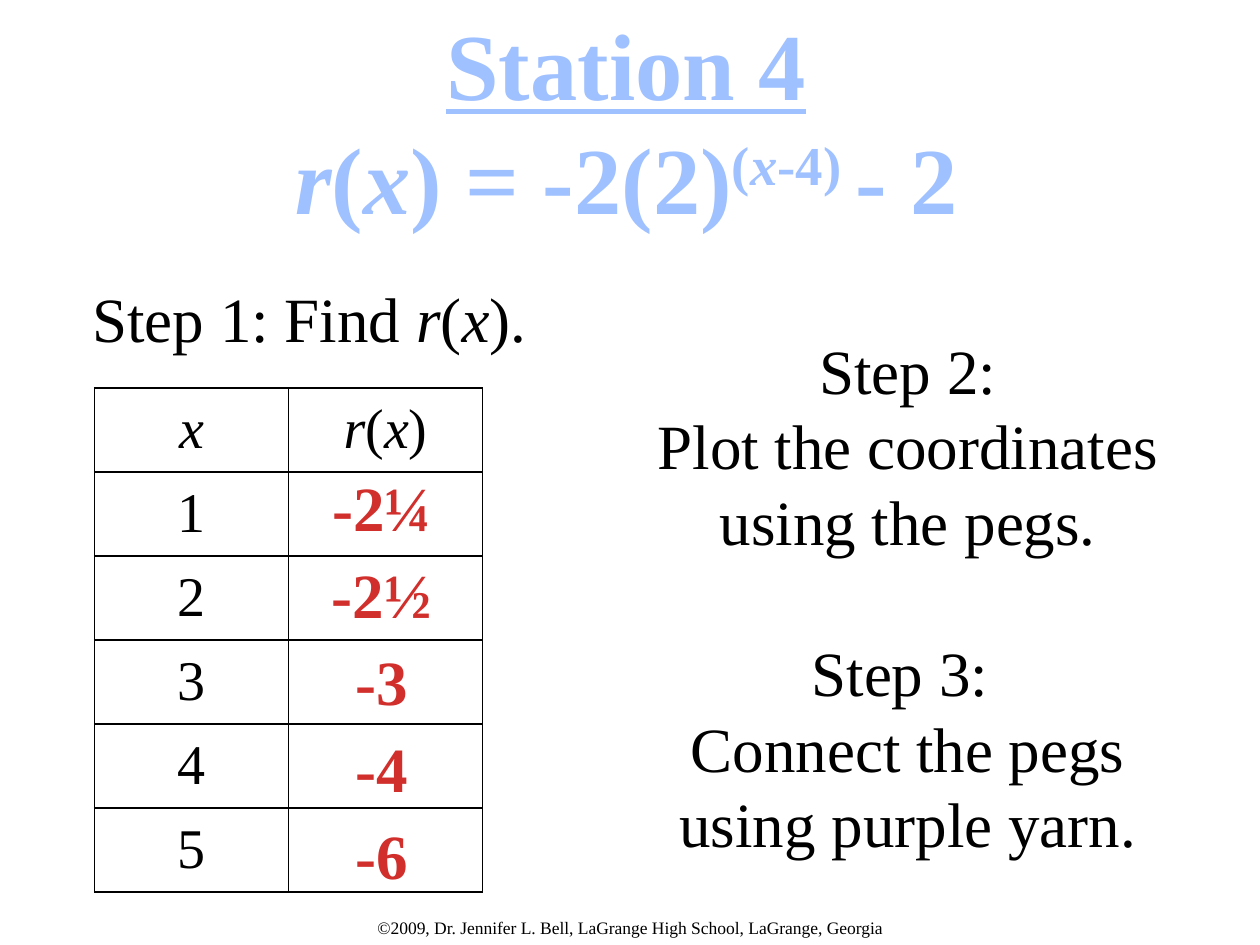
"""Build the Station 4 slide on plotting an exponential function."""
from dataclasses import dataclass

from lxml import etree
from pptx import Presentation
from pptx.dml.color import RGBColor
from pptx.enum.text import MSO_ANCHOR, MSO_AUTO_SIZE, PP_ALIGN
from pptx.oxml.ns import qn
from pptx.util import Pt

CENTER, TOP, MIDDLE = PP_ALIGN.CENTER, MSO_ANCHOR.TOP, MSO_ANCHOR.MIDDLE
GROW = MSO_AUTO_SIZE.SHAPE_TO_FIT_TEXT
PX = 9144
FACE = "Times New Roman"
HUES = {"ink": "000000", "edge": "467AB8", "pale": "BFD3F9", "sky": "A0C1FF",
        "navy": "003D85", "pink": "FC7C7A", "red": "D02F2C", "deep": "C70500"}
BLUES = ((0, "pale"), (9, "sky"), (50, "navy"), (79, "sky"), (100, "pale"))
REDS = ((0, "pink"), (75, "red"), (100, "deep"))


@dataclass(frozen=True)
class Bit:
    text: str
    ital: bool = False
    sup: bool = False


@dataclass(frozen=True)
class Box:
    left: int
    top: int
    width: int
    height: int

    def emu(self) -> tuple:
        return tuple(n * PX for n in (self.left, self.top, self.width, self.height))


@dataclass(frozen=True)
class Value:
    text: str
    width: int


R, X = Bit("r", True), Bit("x", True)
OPEN, CLOSE = Bit("("), Bit(")")
CALL = (R, OPEN, X, CLOSE)
RULE = (R, OPEN, X, Bit(") = -2(2)"), Bit("(", sup=True), Bit("x", True, True),
        Bit("-4) ", sup=True), Bit("- 2"))
STEPS = ("Step 2:", "Plot the coordinates using the pegs.",
         "Step 3: ", "Connect the pegs using purple yarn.")
VALUES = (Value("-2¼", 107), Value("-2½", 108),
          Value("-3", 64), Value("-4", 64), Value("-6", 64))
CREDIT = "©2009, Dr. Jennifer L. Bell, LaGrange High School, LaGrange, Georgia"


def tint(node, hue: str) -> None:
    fill = etree.SubElement(node, qn("a:solidFill"))
    etree.SubElement(fill, qn("a:srgbClr"), val=HUES[hue])


def shade(run, stops: tuple, edge: str = "") -> None:
    props = run.font._element
    if edge:
        tint(etree.SubElement(props, qn("a:ln"), w="10541"), edge)
    grad = etree.SubElement(props, qn("a:gradFill"))
    items = etree.SubElement(grad, qn("a:gsLst"))
    for spot, hue in stops:
        stop = etree.SubElement(items, qn("a:gs"), pos=str(spot * 1000))
        etree.SubElement(stop, qn("a:srgbClr"), val=HUES[hue])
    etree.SubElement(grad, qn("a:lin"), ang="5400000")


def write(para, bits: tuple, size: int, stops: tuple = (), edge: str = "") -> None:
    para.alignment = CENTER
    para.space_before = Pt(0)
    font = para.font
    font.name, font.size, font.bold = FACE, Pt(size), bool(stops)
    if not stops:
        font.color.rgb = RGBColor.from_string(HUES["ink"])
    for bit in bits:
        run = para.add_run()
        run.text = bit.text
        if bit.ital:
            run.font.italic = True
        if bit.sup:
            run.font._element.set("baseline", "30000")
        if stops:
            shade(run, stops, edge)


def place(shape, box: Box, wrap: bool = True):
    shape.left, shape.top, shape.width, shape.height = box.emu()
    frame = shape.text_frame
    frame.word_wrap = wrap
    frame.auto_size = GROW
    frame.vertical_anchor = TOP
    return frame


def label(slide, box: Box, bits: tuple, size: int, stops: tuple = ()) -> None:
    frame = place(slide.shapes.add_textbox(*box.emu()), box, not stops)
    write(frame.paragraphs[0], bits, size, stops)


def border(cell) -> None:
    props = cell._tc.get_or_add_tcPr()
    for side in ("lnL", "lnR", "lnT", "lnB"):
        tint(etree.SubElement(props, qn(f"a:{side}"), w="12700"), "ink")
    cell.fill.background()


def grid(slide, box: Box) -> None:
    rows = [((X,), CALL)] + [((Bit(str(n)),), ()) for n in range(1, 6)]
    table = slide.shapes.add_table(len(rows), 2, *box.emu()).table
    table.first_row = table.horz_banding = False
    for i, row in enumerate(rows):
        for j, bits in enumerate(row):
            cell = table.cell(i, j)
            border(cell)
            cell.vertical_anchor = MIDDLE
            if bits:
                write(cell.text_frame.paragraphs[0], bits, 32)


def head(slide) -> None:
    frame = place(slide.shapes.title, Box(214, 0, 566, 192), False)
    first = frame.paragraphs[0]
    write(first, (Bit("Station 4"),), 54, BLUES, "edge")
    first.font.underline = True
    write(frame.add_paragraph(), RULE, 54, BLUES, "edge")


def steps(slide) -> None:
    frame = place(slide.placeholders[1], Box(508, 258, 425, 434))
    for i, text in enumerate(STEPS):
        para = frame.add_paragraph() if i else frame.paragraphs[0]
        write(para, (Bit(text),), 36)
        if i == 2:
            para.space_before = Pt(43)
        props = para._p.get_or_add_pPr()
        props.set("marL", "0")
        props.set("indent", "0")
        mark = etree.Element(qn("a:buNone"))
        props.find(qn("a:defRPr")).addprevious(mark)


def main() -> None:
    deck = Presentation()
    deck.slide_width, deck.slide_height = 1000 * PX, 750 * PX
    slide = deck.slides.add_slide(deck.slide_layouts[1])
    head(slide)
    label(slide, Box(33, 217, 425, 71), (Bit("Step 1: Find "), *CALL[:3], Bit(").")), 36)
    grid(slide, Box(75, 308, 308, 400))
    steps(slide)
    for i, item in enumerate(VALUES):
        box = Box(303 - item.width // 2, 367 + 69 * i, item.width, 71)
        label(slide, box, (Bit(item.text),), 36, REDS)
    label(slide, Box(0, 723, 1000, 27), (Bit(CREDIT),), 10)
    deck.save("out.pptx")


if __name__ == "__main__":
    main()
